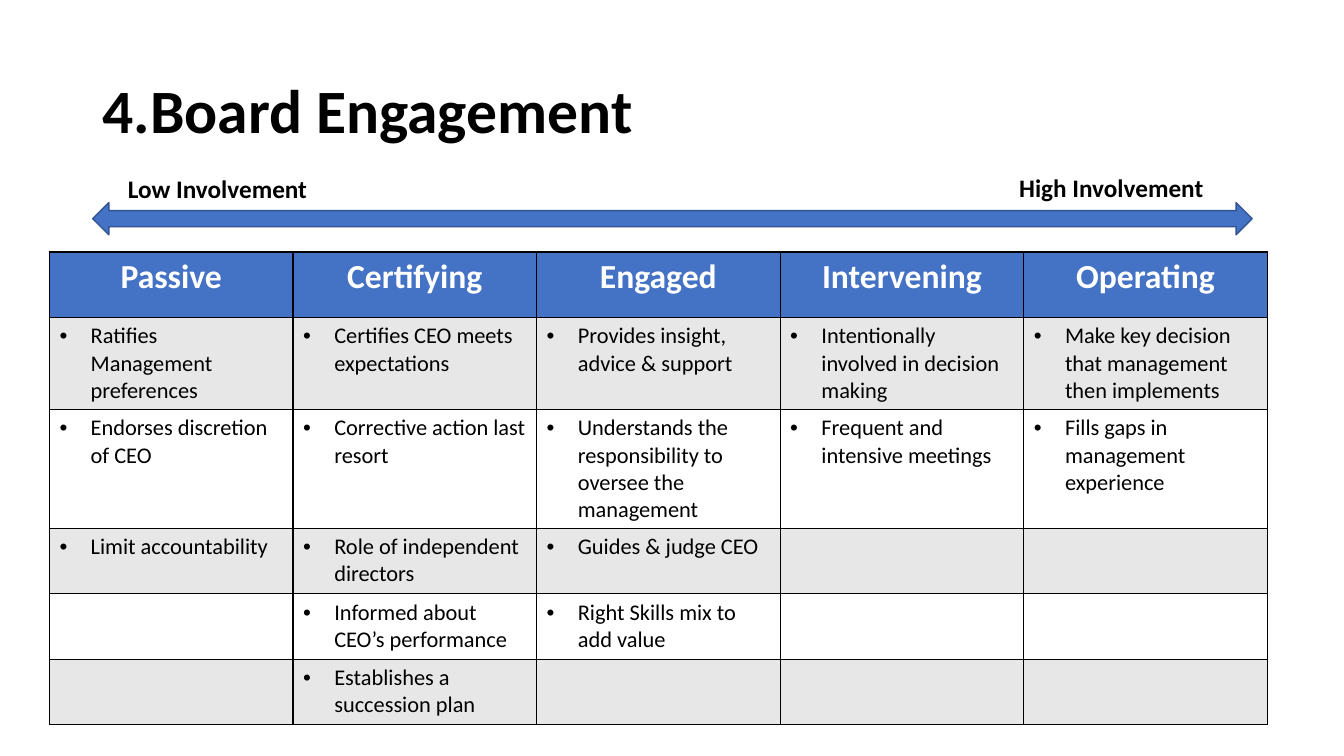
from lxml.etree import SubElement
from pptx import Presentation
from pptx.dml.color import RGBColor
from pptx.enum.shapes import MSO_SHAPE as Shape
from pptx.enum.text import MSO_ANCHOR as Anchor, PP_ALIGN as Align
from pptx.oxml.ns import qn
from pptx.util import Inches, Pt

BLUE, GREY, WHITE, BLACK = "4472C4", "E7E7E7", "FFFFFF", "000000"
HEADS = ["Passive", "Certifying", "Engaged", "Intervening", "Operating"]
ROWS = [
    ["Ratifies Management preferences", "Certifies CEO meets expectations",
     "Provides insight, advice & support",
     "Intentionally involved in decision making",
     "Make key decision that management then implements"],
    ["Endorses discretion of CEO", "Corrective action last resort",
     "Understands the responsibility to oversee the management",
     "Frequent and intensive meetings", "Fills gaps in management experience"],
    ["Limit accountability", "Role of independent directors",
     "Guides & judge CEO", "", ""],
    ["", "Informed about CEO’s performance", "Right Skills mix to add value", "", ""],
    ["", "Establishes a succession plan", "", "", ""],
]
HEIGHTS = [0.65, 0.91, 1.18, 0.65, 0.65, 0.65]


def paint(fill, color):
    fill.solid()
    fill.fore_color.rgb = RGBColor.from_string(color)


def write(frame, text, size, color=BLACK, bold=True):
    frame.text = text
    para = frame.paragraphs[0]
    for run in para.runs:
        font = run.font
        font.name, font.size, font.bold = "Calibri", Pt(size), bold
        font.color.rgb = RGBColor.from_string(color)
    return para


def label(slide, text, size, left, top, width, height):
    box = slide.shapes.add_textbox(*map(Inches, (left, top, width, height)))
    frame = box.text_frame
    frame.word_wrap = True
    frame.vertical_anchor = Anchor.MIDDLE
    return write(frame, text, size)


def bullet(para):
    props = para._p.get_or_add_pPr()
    props.set("marL", str(Inches(0.31)))
    props.set("indent", str(-Inches(0.31)))
    SubElement(props, qn("a:buFont"), typeface="Arial")
    SubElement(props, qn("a:buChar"), char="•")


def border(cell):
    props = cell._tc.get_or_add_tcPr()
    for side in "LRTB":
        line = SubElement(props, qn("a:ln" + side), w=str(Pt(1)))
        fill = SubElement(line, qn("a:solidFill"))
        SubElement(fill, qn("a:srgbClr"), val=BLACK)


def scale(slide, left, top, width):
    shape = slide.shapes.add_shape(
        Shape.LEFT_RIGHT_ARROW, *map(Inches, (left, top + 0.35, width, 0.32)))
    shape.shadow.inherit = False
    paint(shape.fill, BLUE)
    paint(shape.line.fill, "325491")
    shape.line.width = Pt(1)
    label(slide, "Low Involvement", 18, left + 0.25, top + 0.01, 2.61, 0.4)
    label(slide, "High Involvement", 18, left + width - 2.41, top, 2.41, 0.4)


def grid(slide, left, top, width):
    table = slide.shapes.add_table(
        len(HEIGHTS), len(HEADS),
        *map(Inches, (left, top, width, sum(HEIGHTS)))).table
    for col in table.columns:
        col.width = Inches(width / len(HEADS))
    for i, (height, texts) in enumerate(zip(HEIGHTS, [HEADS] + ROWS)):
        table.rows[i].height = Inches(height)
        for j, text in enumerate(texts):
            cell = table.cell(i, j)
            border(cell)
            paint(cell.fill, BLUE if i == 0 else GREY if i % 2 else WHITE)
            if i == 0:
                para = write(cell.text_frame, text, 24, WHITE)
                para.alignment = Align.CENTER
            elif text:
                bullet(write(cell.text_frame, text, 16, bold=False))


def main():
    deck = Presentation()
    deck.slide_width, deck.slide_height = Inches(13.33), Inches(7.5)
    slide = deck.slides.add_slide(deck.slide_layouts[6])
    title = label(slide, "4.Board Engagement", 44, 0.92, 0.4, 11.5, 1.45)
    title.line_spacing = 0.9
    scale(slide, 0.92, 1.66, 11.5)
    grid(slide, 0.49, 2.5, 12.08)
    deck.save("out.pptx")


if __name__ == "__main__":
    main()
